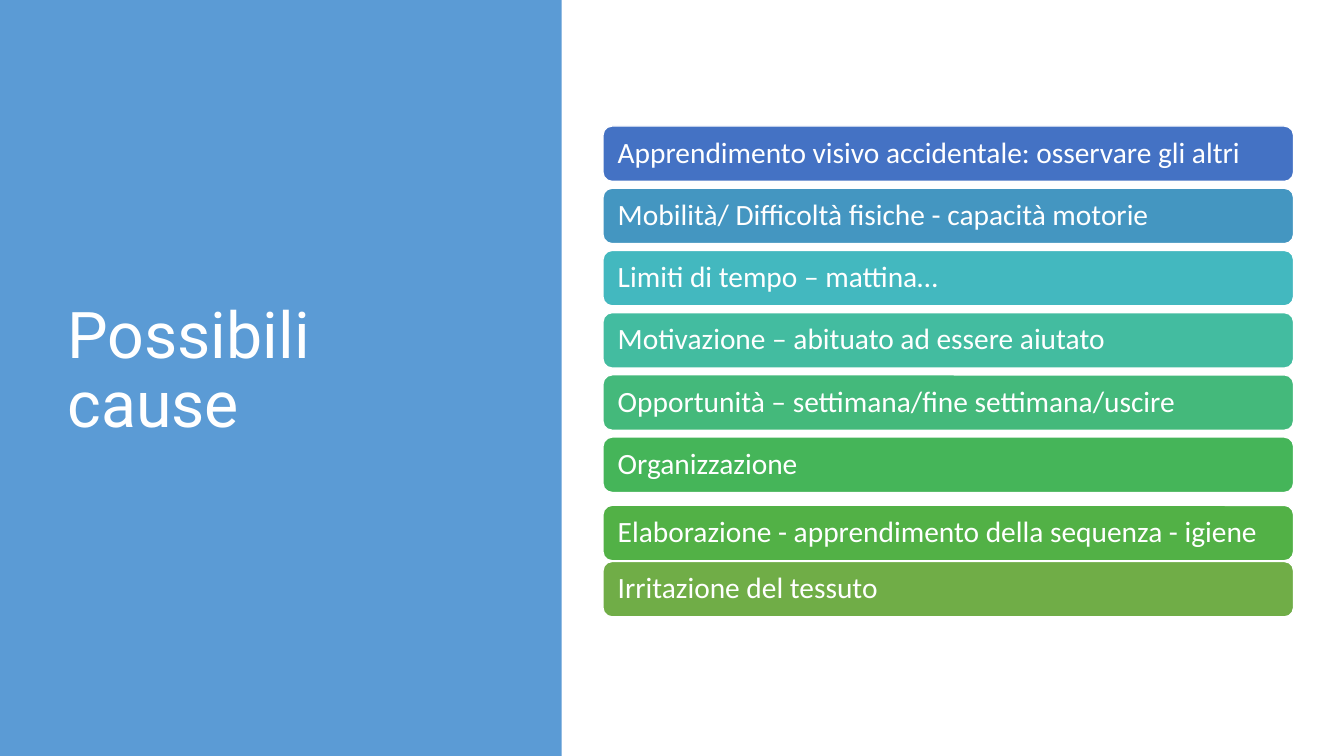
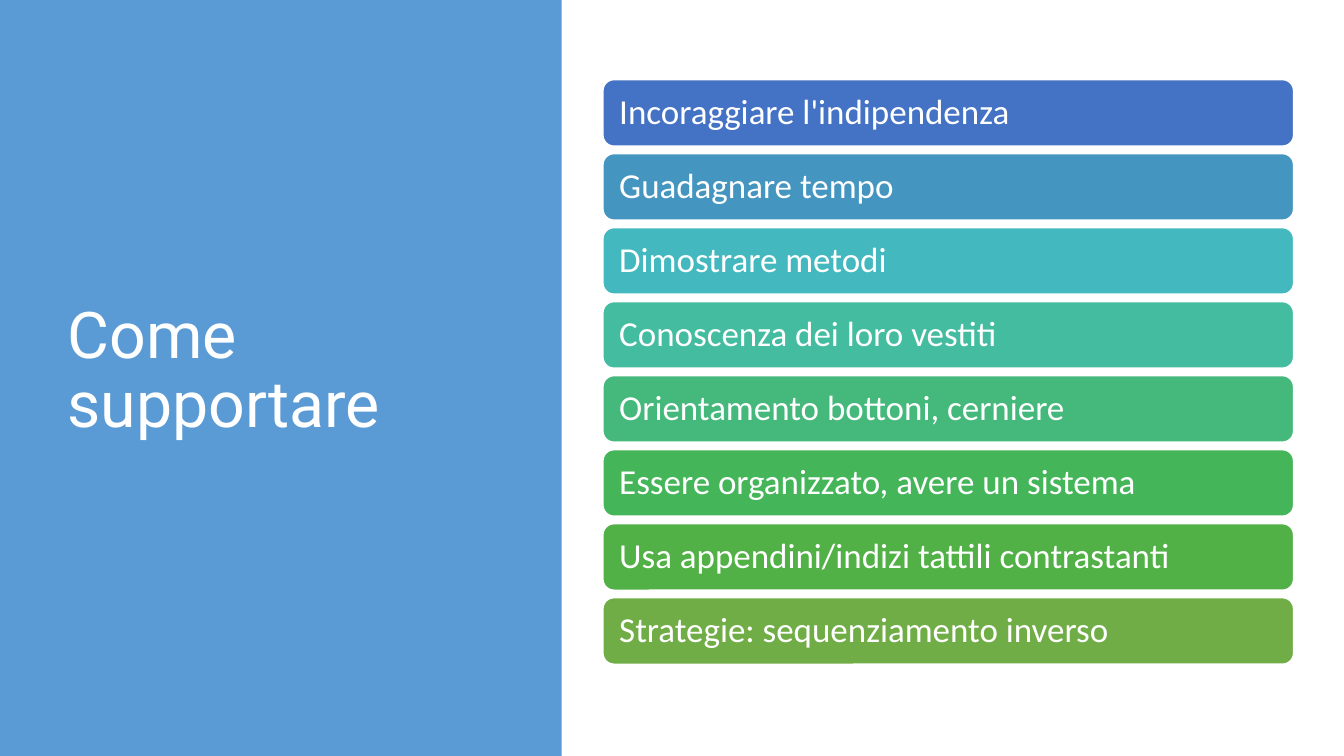
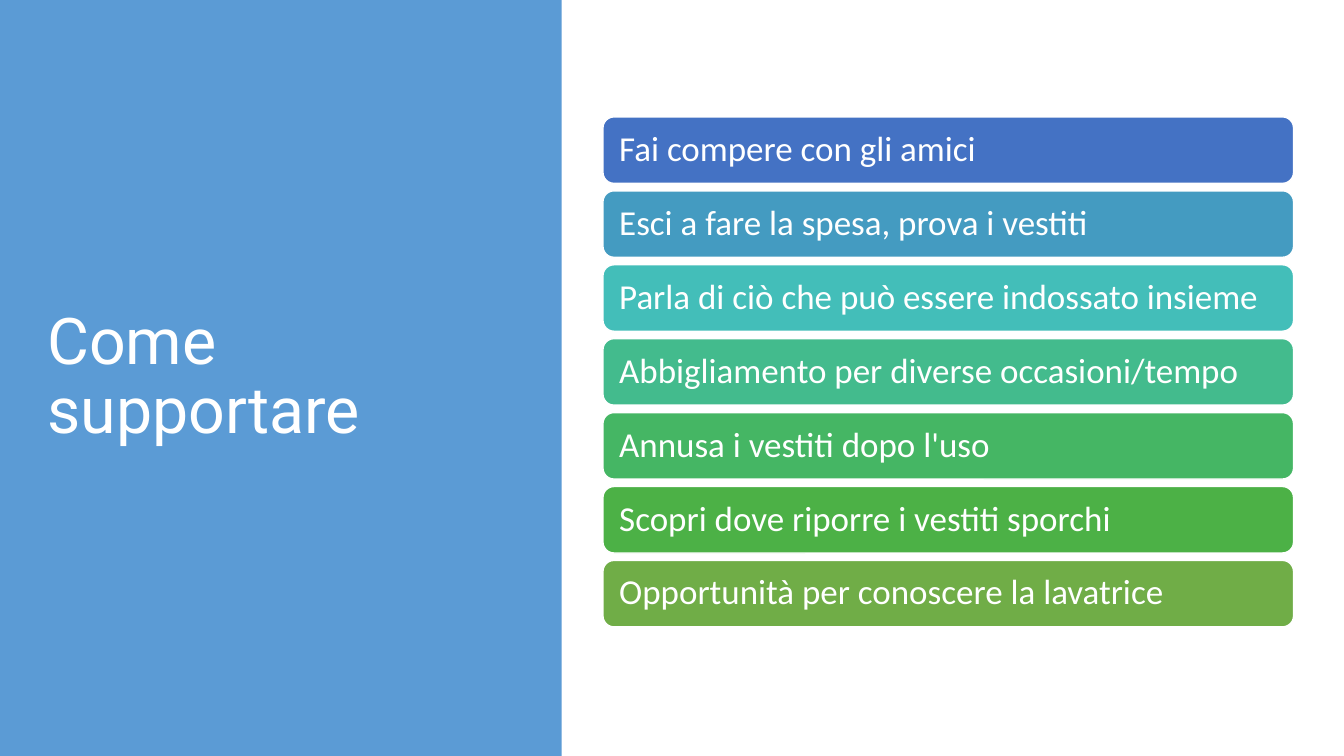
from dataclasses import dataclass

from pptx import Presentation
from pptx.dml.color import RGBColor
from pptx.enum import shapes, text
from pptx.util import Inches, Pt


@dataclass(frozen=True)
class Theme:
    panel: str = "5B9BD5"
    white: str = "FFFFFF"
    title_font: str = "Roboto"
    body_font: str = "Calibri"
    title_size: int = 46
    outline: int = 1
    line_spacing: float = 0.9
    eight_bars: tuple = ("4472C4", "4496C1", "43B8BF", "43BCA0",
                         "44B97B", "45B559", "52B146", "70AD47")
    seven_bars: tuple = ("4472C4", "449BC1", "43BEB9", "43BB8D",
                         "45B664", "4CB146", "70AD47")


THEME = Theme()

# Shared geometry, in inches
SLIDE_WIDTH, SLIDE_HEIGHT = 13.33, 7.5
PANEL_WIDTH = 5.57
TITLE_HEIGHT = 6.02
BAR_LEFT, BAR_WIDTH = 5.98, 6.85

# Content: title is (left, top, width); first and last are bar tops;
# nudges shift single bars away from the even spacing
PAGES = [
    dict(
        title="Possibili\vcause", title_at=(0.57, 0.68, 4.16),
        first=1.25, last=5.57, height=0.55, size=21, inset=0.12,
        colors=THEME.eight_bars, nudges={6: 0.06},
        bars=[
            "Apprendimento visivo accidentale: osservare gli altri",
            "Mobilità/ Difficoltà fisiche - capacità motorie",
            "Limiti di tempo – mattina…",
            "Motivazione – abituato ad essere aiutato",
            "Opportunità – settimana/fine settimana/uscire",
            "Organizzazione",
            "Elaborazione - apprendimento della sequenza - igiene",
            "Irritazione del tessuto",
        ],
    ),
    dict(
        title="Come supportare", title_at=(0.57, 0.68, 4.62),
        first=0.79, last=5.93, height=0.66, size=25, inset=0.13,
        colors=THEME.eight_bars, nudges={},
        bars=[
            "Incoraggiare l'indipendenza",
            "Guadagnare tempo",
            "Dimostrare metodi",
            "Conoscenza dei loro vestiti",
            "Orientamento bottoni, cerniere",
            "Essere organizzato, avere un sistema",
            "Usa appendini/indizi tattili contrastanti",
            "Strategie: sequenziamento inverso",
        ],
    ),
    dict(
        title="Come supportare", title_at=(0.37, 0.74, 4.62),
        first=1.16, last=5.56, height=0.66, size=25, inset=0.13,
        colors=THEME.seven_bars, nudges={},
        bars=[
            "Fai compere con gli amici",
            "Esci a fare la spesa, prova i vestiti",
            "Parla di ciò che può essere indossato insieme",
            "Abbigliamento per diverse occasioni/tempo",
            "Annusa i vestiti dopo l'uso",
            "Scopri dove riporre i vestiti sporchi",
            "Opportunità per conoscere la lavatrice",
        ],
    ),
]


def place(shape, left, top, width, height):
    shape.left, shape.top = Inches(left), Inches(top)
    shape.width, shape.height = Inches(width), Inches(height)


def write(shape, words, font, size):
    """Left-aligned, vertically centred white text."""
    frame = shape.text_frame
    frame.text = words
    frame.word_wrap = True
    frame.auto_size = text.MSO_AUTO_SIZE.NONE
    frame.vertical_anchor = text.MSO_ANCHOR.MIDDLE
    para = frame.paragraphs[0]
    para.alignment = text.PP_ALIGN.LEFT
    para.line_spacing = THEME.line_spacing
    para.font.name, para.font.size = font, Pt(size)
    para.font.color.rgb = RGBColor.from_string(THEME.white)
    return frame


def add_block(page, kind, at, fill):
    block = page.shapes.add_shape(kind, *(Inches(length) for length in at))
    block.shadow.inherit = False
    block.fill.solid()
    block.fill.fore_color.rgb = RGBColor.from_string(fill)
    block.line.fill.background()
    return block


def add_panel_and_title(page, content):
    add_block(page, shapes.MSO_SHAPE.RECTANGLE,
              (0, 0, PANEL_WIDTH, SLIDE_HEIGHT), THEME.panel)
    title = page.shapes.title
    place(title, *content["title_at"], TITLE_HEIGHT)
    write(title, content["title"], THEME.title_font, THEME.title_size)
    page.shapes.element.append(title.element)  # bring in front of the panel


def add_bars(page, content):
    bars = content["bars"]
    step = (content["last"] - content["first"]) / (len(bars) - 1)
    for index, (words, color) in enumerate(zip(bars, content["colors"])):
        top = content["first"] + index * step + content["nudges"].get(index, 0)
        bar = add_block(page, shapes.MSO_SHAPE.ROUNDED_RECTANGLE,
                        (BAR_LEFT, top, BAR_WIDTH, content["height"]), color)
        bar.line.color.rgb = RGBColor.from_string(THEME.white)
        bar.line.width = Pt(THEME.outline)
        frame = write(bar, words, THEME.body_font, content["size"])
        frame.margin_left = frame.margin_right = Inches(content["inset"])


def main():
    deck = Presentation()
    deck.slide_width, deck.slide_height = Inches(SLIDE_WIDTH), Inches(SLIDE_HEIGHT)
    title_only = deck.slide_layouts.get_by_name("Title Only")
    for content in PAGES:
        page = deck.slides.add_slide(title_only)
        add_panel_and_title(page, content)
        add_bars(page, content)
    deck.save("out.pptx")


if __name__ == "__main__":
    main()
